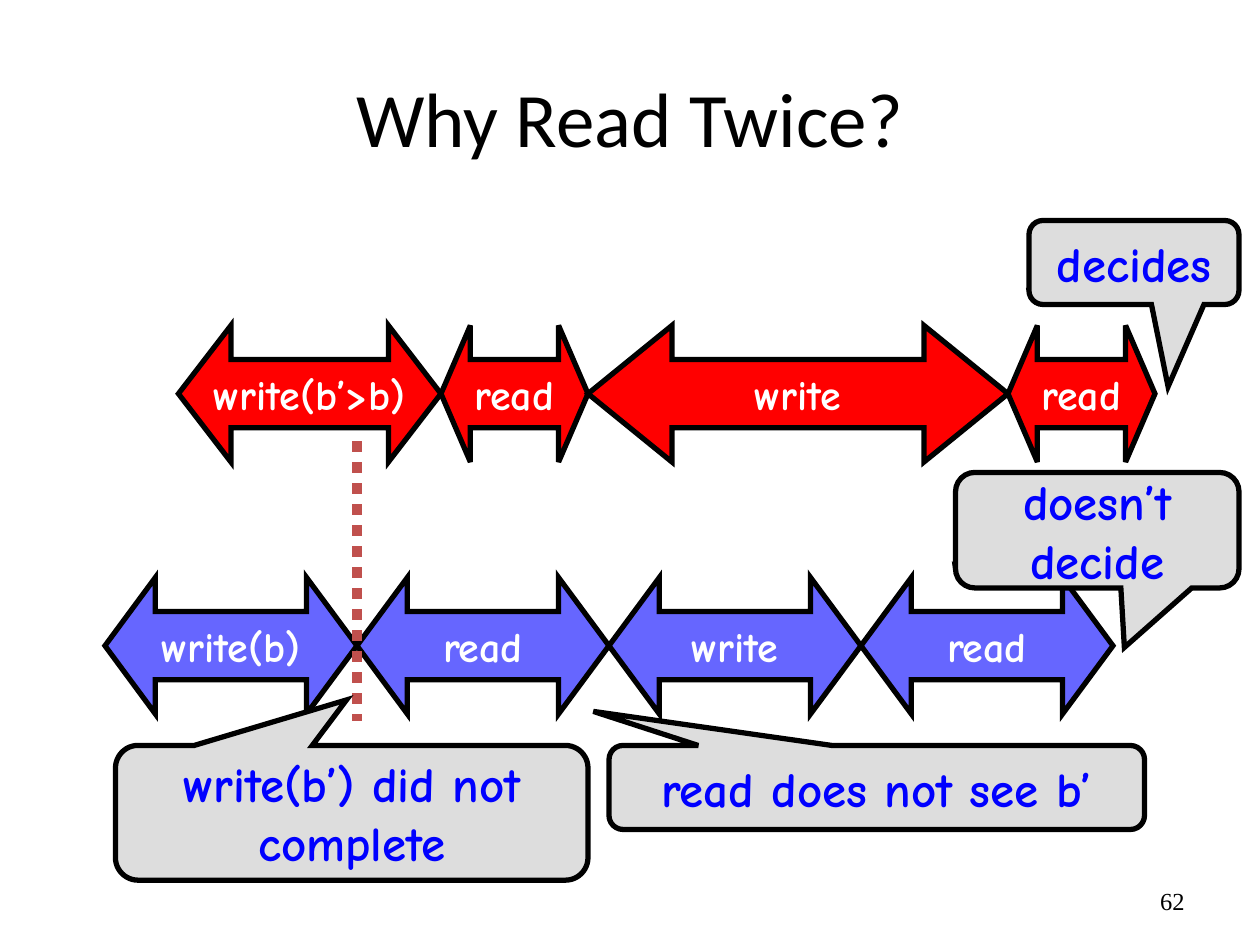
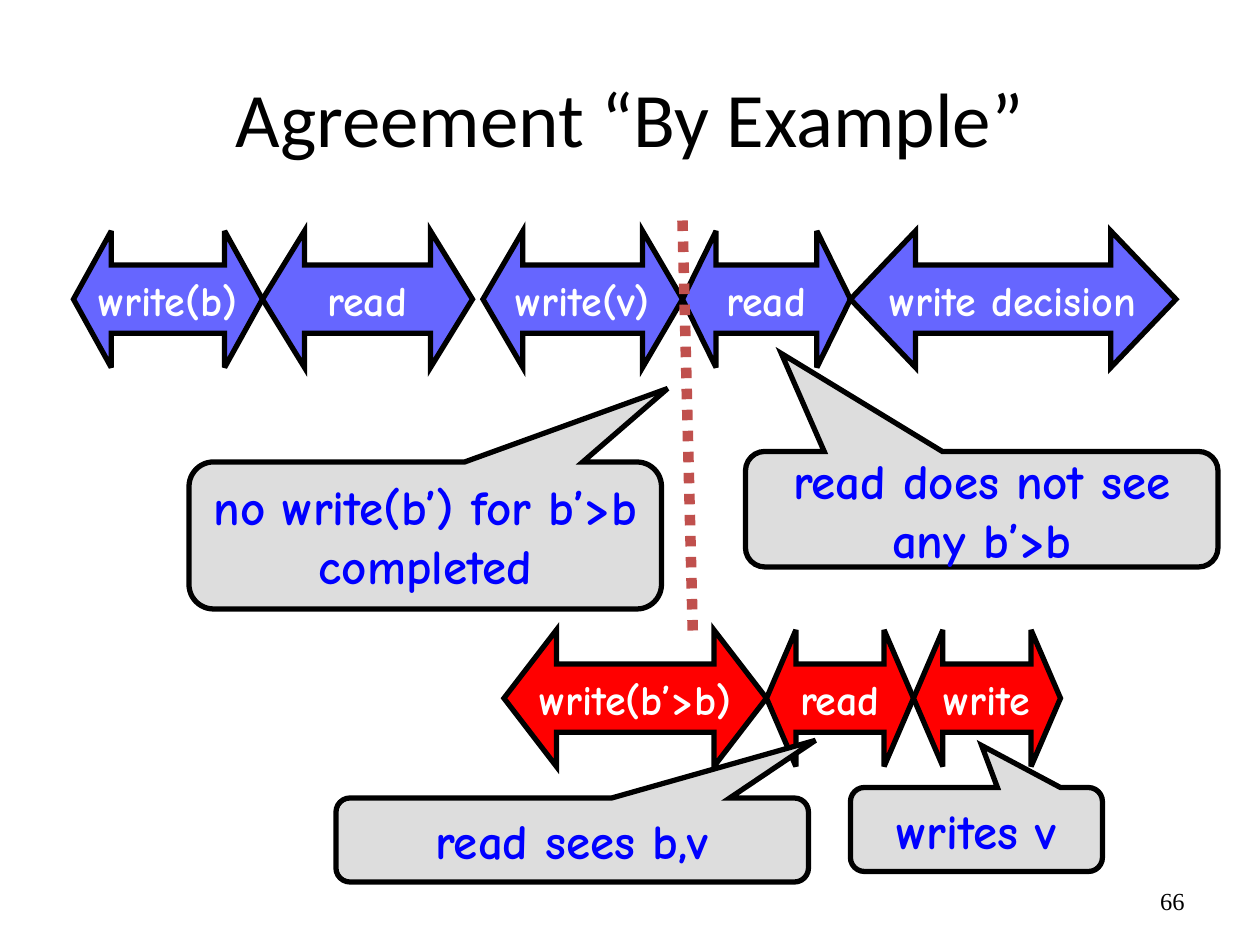
from lxml import etree
from pptx import Presentation
from pptx.dml.color import RGBColor
from pptx.enum.dml import MSO_LINE
from pptx.enum.shapes import MSO_CONNECTOR, MSO_SHAPE
from pptx.enum.text import MSO_ANCHOR, PP_ALIGN
from pptx.oxml.ns import qn
from pptx.util import Pt

DOUBLE_ARROW = MSO_SHAPE.LEFT_RIGHT_ARROW
CALLOUT = MSO_SHAPE.ROUNDED_RECTANGULAR_CALLOUT
STRAIGHT = MSO_CONNECTOR.STRAIGHT
DOTTED = MSO_LINE.ROUND_DOT
MIDDLE = MSO_ANCHOR.MIDDLE
CENTER, RIGHT = PP_ALIGN.CENTER, PP_ALIGN.RIGHT
TITLE_ONLY = 5

BLACK, BLUE, RED = "000000", "6666FF", "FF0000"
CALLOUT_FILL, MOMENT_COLOR = "DDDDDD", "C0504D"

TITLE_FONT = {"name": "Calibri", "size": Pt(44), "bold": False}
NUMBER_FONT = {"name": "Times New Roman", "size": Pt(14)}
STEP_FONT = {"name": "Comic Neue", "size": Pt(24), "bold": True}
REMARK_FONT = {"name": "Comic Neue", "size": Pt(28), "bold": True}

TITLE_BOX = (36, 21.6, 648, 90)
NUMBER_BOX = (516, 500.4, 168, 28.8)
STEP_HEIGHT = 78
HEAD_SHARE = 0.2  # arrowhead length as a share of the step's width
CORNER = 0.167


def rgb(color):
    return RGBColor.from_string(color)


def points(*lengths):
    return [Pt(length) for length in lengths]


def set_all(target, values):
    for key, value in values.items():
        setattr(target, key, value)


def write_text(shape, text, font, color, align=CENTER, wrap=True):
    frame = shape.text_frame
    set_all(frame, {"text": text, "word_wrap": wrap, "vertical_anchor": MIDDLE})
    paragraph = frame.paragraphs[0]
    paragraph.alignment = align
    run_font = paragraph.runs[0].font
    set_all(run_font, font)
    run_font.color.rgb = rgb(color)


def add_outlined(slide, preset, box, fill, adjustments):
    """Add a filled shape with a thick black, sharp-cornered outline."""
    shape = slide.shapes.add_shape(preset, *points(*box))
    shape.shadow.inherit = False
    shape.fill.solid()
    shape.fill.fore_color.rgb = rgb(fill)
    shape.line.color.rgb = rgb(BLACK)
    shape.line.width = Pt(3)
    outline = shape._element.spPr.find(qn("a:ln"))
    etree.SubElement(outline, qn("a:miter"), lim="800000")
    for index, value in enumerate(adjustments):
        shape.adjustments[index] = value
    return shape


def add_thread(slide, left, top, color, steps):
    """Lay the steps of one thread end to end, from left to right."""
    for label, width in steps:
        head = HEAD_SHARE * width / STEP_HEIGHT
        step = add_outlined(slide, DOUBLE_ARROW, (left, top, width, STEP_HEIGHT),
                            color, (0.5, head))
        write_text(step, label, STEP_FONT, "FFFFFF", wrap=False)
        left += width


def add_moment(slide, start, end):
    """Mark a moment in time with a dotted line across the threads."""
    moment = slide.shapes.add_connector(STRAIGHT, *points(*start, *end))
    moment.line.color.rgb = rgb(MOMENT_COLOR)
    set_all(moment.line, {"width": Pt(6), "dash_style": DOTTED})
    etree.SubElement(moment._element.spPr, qn("a:effectLst"))


def add_remark(slide, text, box, tip):
    """Add a callout whose pointer ends at tip."""
    left, top, width, height = box
    pointer = ((tip[0] - left) / width - 0.5, (tip[1] - top) / height - 0.5)
    remark = add_outlined(slide, CALLOUT, box, CALLOUT_FILL, (*pointer, CORNER))
    write_text(remark, text, REMARK_FONT, "0000FF")


def add_titled_slide(prs, title, number):
    slide = prs.slides.add_slide(prs.slide_layouts[TITLE_ONLY])
    heading = slide.shapes.title
    set_all(heading, dict(zip(("left", "top", "width", "height"), points(*TITLE_BOX))))
    write_text(heading, title, TITLE_FONT, BLACK)
    page = slide.shapes.add_textbox(*points(*NUMBER_BOX))
    write_text(page, number, NUMBER_FONT, BLACK, RIGHT)
    return slide


def build_why_read_twice(prs):
    slide = add_titled_slide(prs, "Why Read Twice?", "62")
    add_thread(slide, 60, 330, BLUE, [
        ("write(b)", 144), ("read", 144), ("write", 144), ("read", 144)])
    add_thread(slide, 102, 186, RED, [
        ("write(b’>b)", 150), ("read", 84), ("write", 240), ("read", 84)])
    add_moment(slide, (204, 252), (204, 412))
    for remark in [
        ("write(b’) did not complete", (66, 426, 270, 77), (198, 400)),
        ("read does not see b’", (348, 426, 306, 48), (339, 406.5)),
        ("decides", (588, 126, 120, 48), (667.5, 221)),
        ("doesn’t decide", (546, 270, 162, 66), (642.5, 370)),
    ]:
        add_remark(slide, *remark)


def build_agreement(prs):
    slide = add_titled_slide(prs, "Agreement “By Example”", "66")
    add_thread(slide, 42, 132, BLUE, [("write(b)", 108), ("read", 120)])
    add_thread(slide, 276, 132, BLUE, [
        ("write(v)", 114), ("read", 96), ("write decision", 186)])
    add_thread(slide, 288, 360, RED, [
        ("write(b’>b)", 150), ("read", 84), ("write", 84)])
    add_moment(slide, (390, 126), (396, 366))
    for remark in [
        ("no write(b’) for b’>b completed", (108, 264, 270, 84), (381.5, 222)),
        ("read does not see any b’>b", (426, 258, 270, 66), (446.5, 202)),
        ("read sees b,v", (192, 456, 270, 48), (466, 423)),
        ("writes v", (486, 450, 144, 48), (561, 426)),
    ]:
        add_remark(slide, *remark)


def main():
    prs = Presentation()
    set_all(prs, {"slide_width": Pt(720), "slide_height": Pt(540)})
    build_why_read_twice(prs)
    build_agreement(prs)
    prs.save("out.pptx")


if __name__ == "__main__":
    main()
